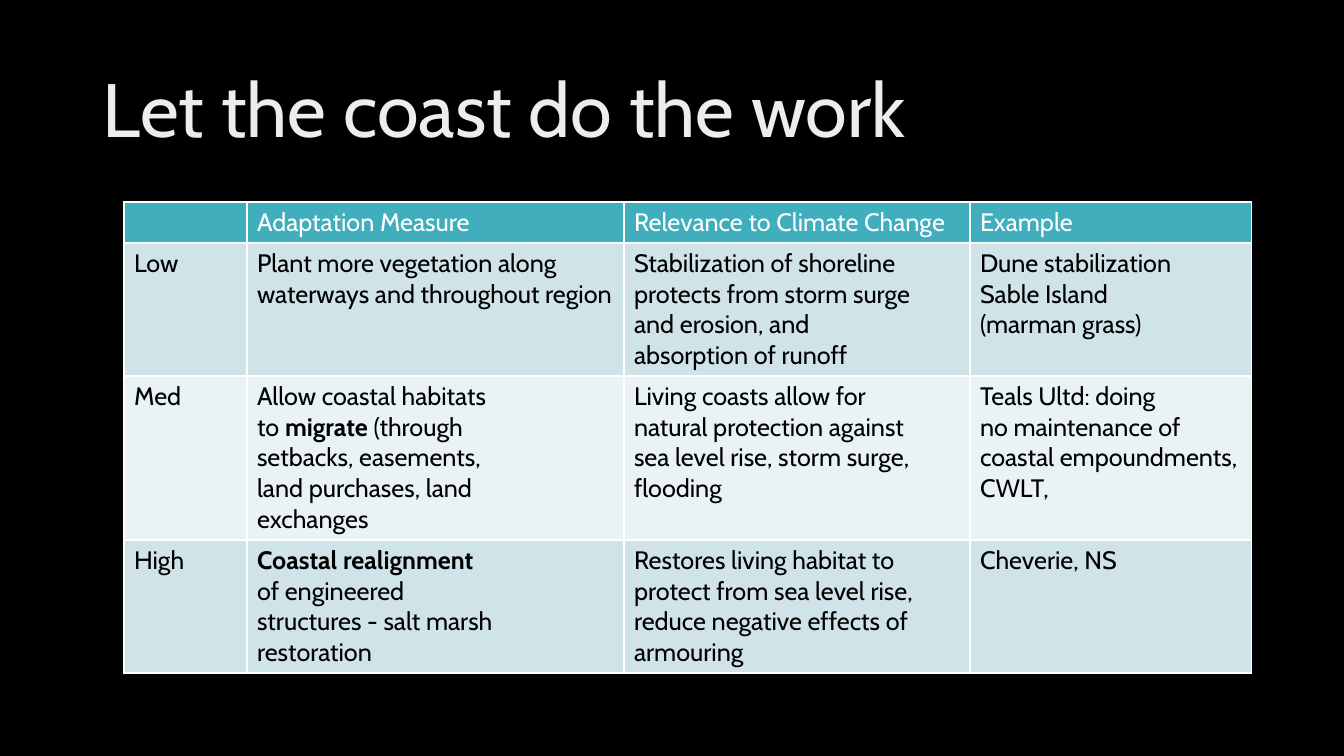
import pptx
import pptx.dml.color
import pptx.enum.text
import pptx.oxml
import pptx.oxml.ns
import pptx.util

COLORS = {
    "background": "000000",
    "title": "EDEDED",
    "header": "41AEBD",
    "header_text": "FFFFFF",
    "band_dark": "CFE3E8",
    "band_light": "E9F2F4",
    "body_text": "000000",
    "border": "FFFFFF",
}
COLUMN_WIDTHS = [123, 377, 346, 282]
ROW_HEIGHTS = [41, 133, 164, 133]

# Text between ** marks is bold; each line is a paragraph.
MEASURES = [
    ["", "Adaptation Measure", "Relevance to Climate Change", "Example"],
    [
        "Low",
        "Plant more vegetation along waterways and throughout region",
        "Stabilization of shoreline\nprotects from storm surge\nand erosion, and\nabsorption of runoff",
        "Dune stabilization\nSable Island\n(marman grass)",
    ],
    [
        "Med",
        "Allow coastal habitats\nto **migrate **(through\nsetbacks, easements,\nland purchases, land\nexchanges",
        "Living coasts allow for\nnatural protection against\nsea level rise, storm surge,\nflooding",
        "Teals Ultd: doing\nno maintenance of\ncoastal empoundments,\nCWLT,",
    ],
    [
        "High",
        "**Coastal realignment**\nof engineered\nstructures - salt marsh\nrestoration",
        "Restores living habitat to\nprotect from sea level rise,\nreduce negative effects of\narmouring",
        "Cheverie, NS",
    ],
]


def px(length):
    return pptx.util.Emu(round(length * 914400 / 100.8))


def rgb(name):
    return pptx.dml.color.RGBColor.from_string(COLORS[name])


class CoastSlide:
    font_name = "Cabin"
    title_size = 54
    body_size = 18

    def __init__(self, presentation):
        self.slide = presentation.slides.add_slide(presentation.slide_layouts[6])
        fill = self.slide.background.fill
        fill.solid()
        fill.fore_color.rgb = rgb("background")

    def style(self, font, size, color):
        font.name = self.font_name
        font.size = pptx.util.Pt(size)
        font.color.rgb = rgb(color)

    def title(self, text, left, top, width, height):
        heading = self.slide.shapes.add_textbox(px(left), px(top), px(width), px(height))
        frame = heading.text_frame
        frame.word_wrap = True
        frame.vertical_anchor = pptx.enum.text.MSO_ANCHOR.MIDDLE
        frame.text = text
        frame.paragraphs[0].line_spacing = 0.9
        self.style(frame.paragraphs[0].runs[0].font, self.title_size, "title")

    def table(self, rows, left, top, widths, heights):
        table = self.slide.shapes.add_table(
            len(rows), len(widths), px(left), px(top), px(sum(widths)), px(sum(heights))
        ).table
        table.first_row = True
        table.horz_banding = False
        for column, width in zip(table.columns, widths):
            column.width = px(width)
        for row, height in zip(table.rows, heights):
            row.height = px(height)
        for r, texts in enumerate(rows):
            band = "header" if r == 0 else ("band_light", "band_dark")[r % 2]
            color = "body_text" if r else "header_text"
            for c, text in enumerate(texts):
                self.cell(table.cell(r, c), text, band, color)

    def cell(self, cell, text, band, color):
        self.borders(cell)
        cell.fill.solid()
        cell.fill.fore_color.rgb = rgb(band)
        cell.text_frame.text = text.replace("**", "")
        for paragraph, line in zip(cell.text_frame.paragraphs, text.split("\n")):
            if "**" in line:
                paragraph.text = ""
                for i, part in enumerate(line.split("**")):
                    if part:
                        run = paragraph.add_run()
                        run.text = part
                        run.font.bold = i % 2 == 1
            for run in paragraph.runs:
                self.style(run.font, self.body_size, color)
                if run.font.bold is None:
                    run.font.bold = False

    def borders(self, cell):
        properties = cell._tc.get_or_add_tcPr()
        for side in "LRTB":
            properties.append(pptx.oxml.parse_xml(
                f'<a:ln{side} {pptx.oxml.ns.nsdecls("a")} w="12700"><a:solidFill>'
                f'<a:srgbClr val="{COLORS["border"]}"/></a:solidFill></a:ln{side}>'
            ))


def main():
    presentation = pptx.Presentation()
    presentation.slide_width = px(1344)
    presentation.slide_height = px(756)
    coast = CoastSlide(presentation)
    coast.title("Let the coast do the work", 93, 40, 1159, 146)
    coast.table(MEASURES, 124, 202, COLUMN_WIDTHS, ROW_HEIGHTS)
    presentation.save("out.pptx")


if __name__ == "__main__":
    main()
